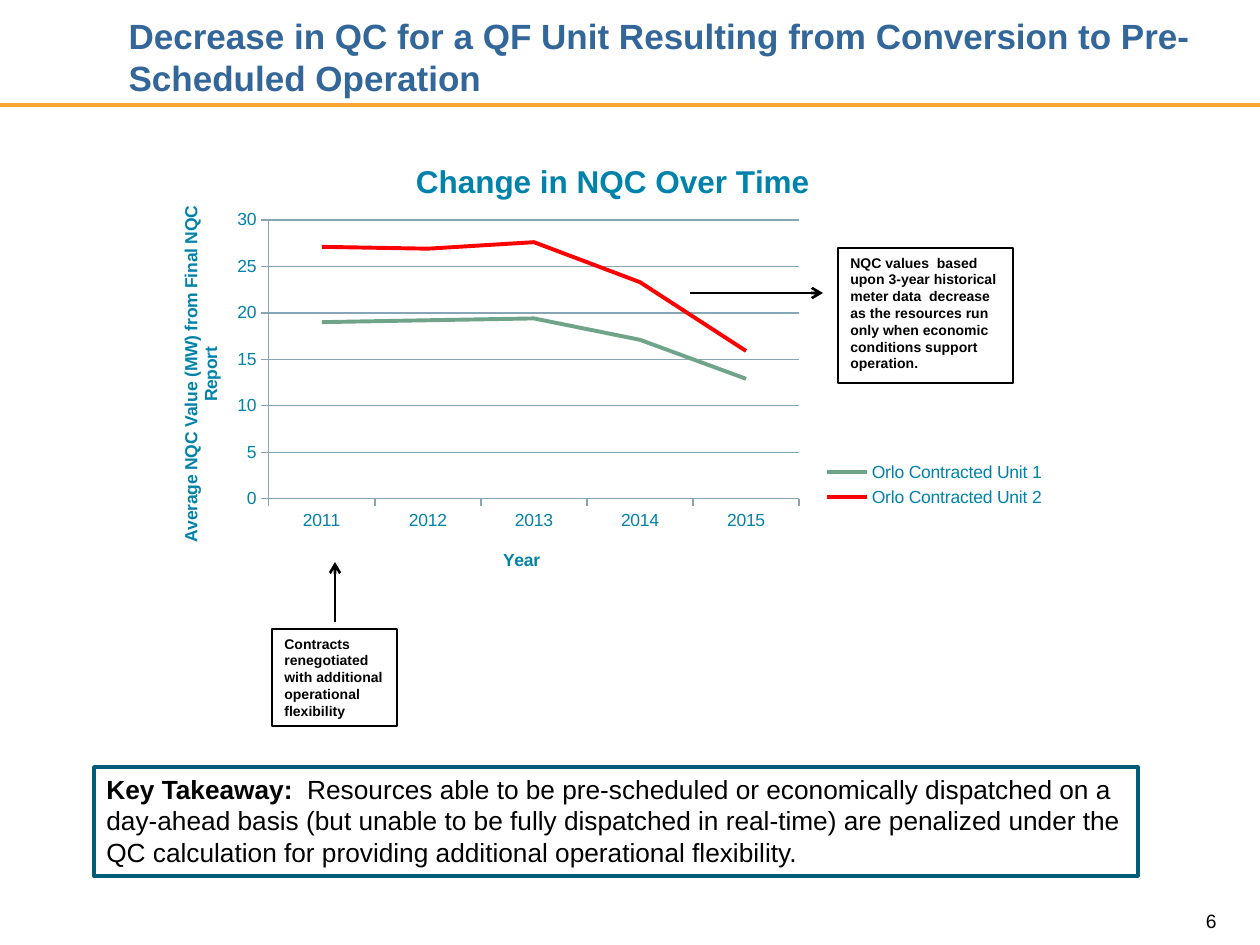
import pptx
import pptx.chart.data
import pptx.dml.color
import pptx.enum.chart
import pptx.enum.shapes
import pptx.enum.text
import pptx.oxml
import pptx.oxml.ns
import pptx.oxml.xmlchemy
import pptx.util
from dataclasses import dataclass

EMU_PER_PX = 914400 / 126
CHART_BOX = (145, 131, 924, 461)


@dataclass(frozen=True)
class Theme:
    font: str = "Arial"
    title: str = "336699"
    rule: str = "FAA534"
    chart: str = "0082AA"
    grid: str = "86A5B5"
    unit_colors: tuple = ("70A489", "FF0000")
    takeaway: str = "005C78"
    ink: str = "000000"
    title_size: int = 20
    chart_title_size: int = 18
    chart_size: int = 10
    note_size: int = 8
    takeaway_size: int = 15
    number_size: int = 11


THEME = Theme()


def px(*lengths):
    return [pptx.util.Emu(round(length * EMU_PER_PX)) for length in lengths]


def rgb(code):
    return pptx.dml.color.RGBColor.from_string(code)


def set_font(font, size, color, bold=None):
    font.name, font.size, font.bold = THEME.font, pptx.util.Pt(size), bold
    font.color.rgb = rgb(color)


def set_line(line, color, width):
    line.color.rgb = rgb(color)
    line.width = pptx.util.Pt(width)


def add_title(page, text):
    title = page.shapes.title
    title.left, title.top, title.width, title.height = px(116, 21, 1113, 84)
    frame = title.text_frame
    frame.word_wrap = True
    frame.auto_size = pptx.enum.text.MSO_AUTO_SIZE.NONE
    frame.vertical_anchor = pptx.enum.text.MSO_ANCHOR.BOTTOM
    para = frame.paragraphs[0]
    para.text = text
    para.alignment = pptx.enum.text.PP_ALIGN.LEFT
    set_font(para.font, THEME.title_size, THEME.title, True)


def add_line(page, start, end, color, width, arrow=False):
    line = page.shapes.add_connector(
        pptx.enum.shapes.MSO_CONNECTOR.STRAIGHT, *px(*start, *end))
    set_line(line.line, color, width)
    if arrow:
        head = pptx.oxml.xmlchemy.OxmlElement("a:tailEnd")
        head.set("type", "arrow")
        line.get_or_add_ln().append(head)
    line._element.spPr.append(pptx.oxml.xmlchemy.OxmlElement("a:effectLst"))


def add_box(page, place, spans, size, color, width):
    """Outlined box; spans are (text, bold) pairs."""
    box = page.shapes.add_shape(pptx.enum.shapes.MSO_SHAPE.RECTANGLE, *px(*place))
    box.shadow.inherit = False
    box.fill.background()
    set_line(box.line, color, width)
    frame = box.text_frame
    frame.word_wrap = True
    frame.vertical_anchor = pptx.enum.text.MSO_ANCHOR.TOP
    para = frame.paragraphs[0]
    para.alignment = pptx.enum.text.PP_ALIGN.LEFT
    set_font(para.font, size, THEME.ink)
    for text, bold in spans:
        span = para.add_run()
        span.text = text
        set_font(span.font, size, THEME.ink, bold)


def add_page_number(page, number):
    box = page.shapes.add_textbox(*px(1118, 903, 111, 37))
    box.text_frame.word_wrap = True
    para = box.text_frame.paragraphs[0]
    para.text = number
    para.alignment = pptx.enum.text.PP_ALIGN.RIGHT
    set_font(para.font, THEME.number_size, THEME.ink)


def make_layout(left, top, width=None, height=None, inner=False):
    """Chart layout element from slide positions in px."""
    box_left, box_top, box_width, box_height = CHART_BOX
    values = {"x": (left - box_left) / box_width, "y": (top - box_top) / box_height}
    if width:
        values.update(w=width / box_width, h=height / box_height)
    parts = ['<c:layoutTarget val="inner"/>'] if inner else []
    parts += [f'<c:{key}Mode val="edge"/>' for key in "xy"]
    parts += [f'<c:{key} val="{value:.3f}"/>' for key, value in values.items()]
    return pptx.oxml.parse_xml(
        f'<c:layout {pptx.oxml.ns.nsdecls("c")}><c:manualLayout>'
        + "".join(parts) + "</c:manualLayout></c:layout>")


def remove_layout(parent):
    for old in parent.findall(pptx.oxml.ns.qn("c:layout")):
        parent.remove(old)


def place_after(parent, tag, layout):
    remove_layout(parent)
    parent.find(pptx.oxml.ns.qn(tag)).addnext(layout)


def set_chart_title(title, text, size, left, top):
    para = title.text_frame.paragraphs[0]
    para.text = text
    set_font(para.font, size, THEME.chart, True)
    place_after(title._element, "c:tx", make_layout(left, top))


def add_line_chart(page, years, units):
    data = pptx.chart.data.CategoryChartData(number_format="0.0")
    data.categories = years
    for name, values in units.items():
        data.add_series(name, values)
    chart = page.shapes.add_chart(
        pptx.enum.chart.XL_CHART_TYPE.LINE, *px(*CHART_BOX), data).chart
    set_font(chart.font, THEME.chart_size, THEME.chart)

    # Titles
    chart.has_title = True
    set_chart_title(chart.chart_title, "Change in NQC Over Time",
                    THEME.chart_title_size, 410, 155)
    set_chart_title(chart.category_axis.axis_title, "Year",
                    THEME.chart_size, 500, 546)
    set_chart_title(chart.value_axis.axis_title,
                    "Average NQC Value (MW) from Final NQC Report",
                    THEME.chart_size, 176, 203)

    # Axes
    scale = chart.value_axis
    scale.minimum_scale, scale.maximum_scale, scale.major_unit = 0, 30, 5
    scale.tick_labels.number_format = "0"
    scale.tick_labels.number_format_is_linked = False
    scale.has_major_gridlines = True
    set_line(scale.major_gridlines.format.line, THEME.grid, 0.75)
    for axis in (chart.category_axis, scale):
        axis.major_tick_mark = pptx.enum.chart.XL_TICK_MARK.OUTSIDE
        set_line(axis.format.line, THEME.grid, 0.75)

    # Series
    plot = chart.plots[0]
    plot.vary_by_categories = False
    for series, color in zip(plot.series, THEME.unit_colors):
        series.smooth = False
        series.marker.style = pptx.enum.chart.XL_MARKER_STYLE.NONE
        set_line(series.format.line, color, 2.25)

    # Legend and plot area
    chart.has_legend = True
    chart.legend.position = pptx.enum.chart.XL_LEGEND_POSITION.RIGHT
    chart.legend.include_in_layout = False
    place_after(chart.legend._element, "c:legendPos",
                make_layout(812, 457, 245, 56))
    area = chart._chartSpace.chart.plotArea
    remove_layout(area)
    area.insert(0, make_layout(269, 220, 530, 279, inner=True))


def main():
    deck = pptx.Presentation()
    deck.slide_width, deck.slide_height = px(1260, 945)
    page = deck.slides.add_slide(deck.slide_layouts[5])

    # Heading and page number
    add_line(page, (0, 105), (1260, 105), THEME.rule, 2)
    add_page_number(page, "6")
    add_title(page, "Decrease in QC for a QF Unit Resulting from "
                    "Conversion to Pre-Scheduled Operation")

    # Chart
    add_line_chart(page, ["2011", "2012", "2013", "2014", "2015"], {
        "Orlo Contracted Unit 1": (19, 19.2, 19.4, 17.1, 12.9),
        "Orlo Contracted Unit 2": (27.1, 26.9, 27.6, 23.3, 15.9),
    })

    # Callouts and their arrows
    notes = [
        ((272, 629, 125, 97), "Contracts renegotiated with additional "
                              "operational flexibility"),
        ((838, 248, 175, 135), "NQC values  based upon 3-year historical meter "
                               "data  decrease as the resources run only when "
                               "economic conditions support operation."),
    ]
    for place, text in notes:
        add_box(page, place, [(text, True)], THEME.note_size, THEME.ink, 0.75)
    for start, end in [((335, 622), (335, 562)), ((690, 293), (823, 293))]:
        add_line(page, start, end, THEME.ink, 1.5, arrow=True)

    # Takeaway
    takeaway = ("Resources able to be pre-scheduled or economically dispatched "
                "on a day-ahead basis (but unable to be fully dispatched in "
                "real-time) are penalized under the QC calculation for "
                "providing additional operational flexibility.")
    add_box(page, (94, 767, 1044, 109),
            [("Key Takeaway:  ", True), (takeaway, False)],
            THEME.takeaway_size, THEME.takeaway, 2)

    deck.save("out.pptx")


if __name__ == "__main__":
    main()
